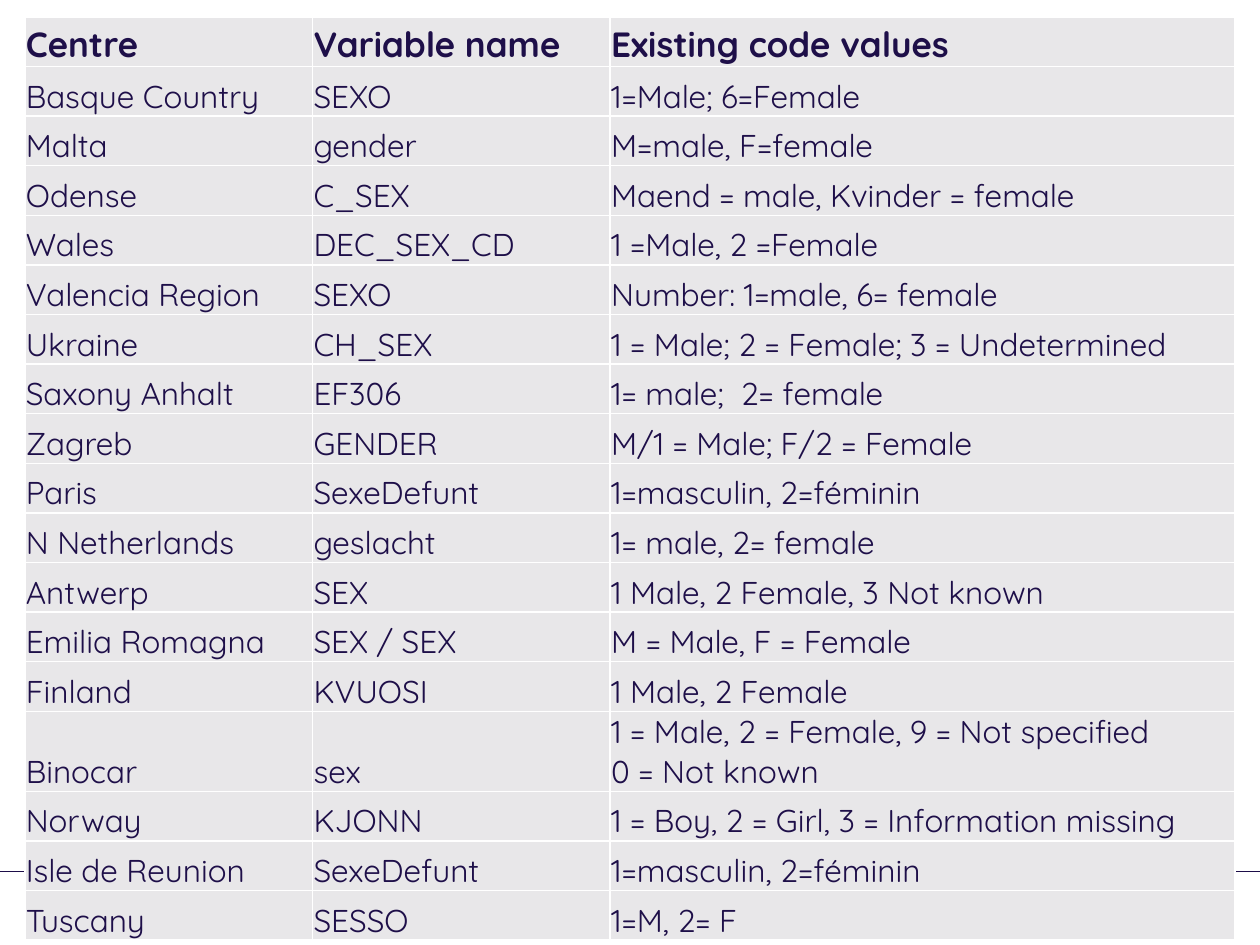
"""Build a slide that tabulates how each centre codes the sex variable."""
from dataclasses import dataclass

import lxml.etree
import pptx
import pptx.dml.color
import pptx.enum.shapes
import pptx.enum.text
import pptx.oxml.ns
import pptx.util

EMU_PER_PX = 3600
SLIDE_WIDTH, SLIDE_HEIGHT = 2540, 1905
TABLE_LEFT, TABLE_TOP = 50, 34
COLUMN_WIDTHS = (580, 600, 1260)
ROW_HEIGHT = 100
CELL_INSET = 2
RULE_TOP = 1757

FONT_NAME = "Quicksand"
INK = pptx.dml.color.RGBColor(0x1E, 0x0F, 0x49)
RULE = pptx.dml.color.RGBColor(0x1D, 0x0D, 0x49)
CELL_FILL = pptx.dml.color.RGBColor(0xE8, 0xE7, 0xE9)
BORDER = pptx.dml.color.RGBColor(0xFF, 0xFF, 0xFF)


@dataclass(frozen=True)
class Coding:
    centre: str
    variable: str
    values: str
    size: int = 18
    bold: bool = False


CODINGS = (
    Coding("Centre", "Variable name", "Existing code values", size=20, bold=True),
    Coding("Basque Country", "SEXO", "1=Male; 6=Female"),
    Coding("Malta", "gender", "M=male, F=female"),
    Coding("Odense", "C_SEX", "Maend = male, Kvinder = female"),
    Coding("Wales", "DEC_SEX_CD", "1 =Male, 2 =Female"),
    Coding("Valencia Region", "SEXO", "Number: 1=male, 6= female"),
    Coding("Ukraine", "CH_SEX", "1 = Male; 2 = Female; 3 = Undetermined"),
    Coding("Saxony Anhalt", "EF306", "1= male;  2= female"),
    Coding("Zagreb", "GENDER", "M/1 = Male; F/2 = Female"),
    Coding("Paris", "SexeDefunt", "1=masculin, 2=féminin"),
    Coding("N Netherlands", "geslacht", "1= male, 2= female"),
    Coding("Antwerp", "SEX", "1 Male, 2 Female, 3 Not known"),
    Coding("Emilia Romagna", "SEX / SEX", "M = Male, F = Female"),
    Coding("Finland", "KVUOSI", "1 Male, 2 Female"),
    Coding("Binocar", "sex", "1 = Male, 2 = Female, 9 = Not specified\n0 = Not known"),
    Coding("Norway", "KJONN", "1 = Boy, 2 = Girl, 3 = Information missing"),
    Coding("Isle de Reunion", "SexeDefunt", "1=masculin, 2=féminin"),
    Coding("Tuscany", "SESSO", "1=M, 2= F"),
)


def px(length: int) -> pptx.util.Emu:
    return pptx.util.Emu(length * EMU_PER_PX)


def add_rule(page) -> None:
    rule = page.shapes.add_connector(
        pptx.enum.shapes.MSO_CONNECTOR.STRAIGHT,
        px(0), px(RULE_TOP), px(SLIDE_WIDTH), px(RULE_TOP),
    )
    rule.line.color.rgb = RULE
    rule.line.width = pptx.util.Pt(0.25)
    properties = rule._element.spPr
    lxml.etree.SubElement(properties, pptx.oxml.ns.qn("a:effectLst"))


def add_borders(cell) -> None:
    properties = cell._tc.get_or_add_tcPr()
    for side in ("lnL", "lnR", "lnT", "lnB"):
        border = lxml.etree.SubElement(
            properties, pptx.oxml.ns.qn(f"a:{side}"), w=str(pptx.util.Pt(1))
        )
        fill = lxml.etree.SubElement(border, pptx.oxml.ns.qn("a:solidFill"))
        lxml.etree.SubElement(fill, pptx.oxml.ns.qn("a:srgbClr"), val=str(BORDER))


def fill_cell(cell, text: str, size: int, bold: bool) -> None:
    add_borders(cell)
    cell.fill.solid()
    cell.fill.fore_color.rgb = CELL_FILL
    cell.margin_left = cell.margin_right = cell.margin_top = px(CELL_INSET)
    cell.margin_bottom = px(0)
    cell.vertical_anchor = pptx.enum.text.MSO_ANCHOR.BOTTOM
    para = cell.text_frame.paragraphs[0]
    para.text = text
    para.font.name = FONT_NAME
    para.font.size = pptx.util.Pt(size)
    para.font.bold = bold
    para.font.color.rgb = INK


def add_coding_table(page, codings: tuple[Coding, ...]) -> None:
    table = page.shapes.add_table(
        len(codings), len(COLUMN_WIDTHS), px(TABLE_LEFT), px(TABLE_TOP),
        px(sum(COLUMN_WIDTHS)), px(ROW_HEIGHT * len(codings)),
    ).table
    table.first_row = table.horz_banding = False
    for column, width in zip(table.columns, COLUMN_WIDTHS):
        column.width = px(width)
    for row, coding in zip(table.rows, codings):
        row.height = px(ROW_HEIGHT)
        texts = (coding.centre, coding.variable, coding.values)
        for cell, text in zip(row.cells, texts):
            fill_cell(cell, text, coding.size, coding.bold)


def main() -> None:
    deck = pptx.Presentation()
    deck.slide_width, deck.slide_height = px(SLIDE_WIDTH), px(SLIDE_HEIGHT)
    page = deck.slides.add_slide(deck.slide_layouts[6])
    add_rule(page)
    add_coding_table(page, CODINGS)
    deck.save("out.pptx")


if __name__ == "__main__":
    main()
